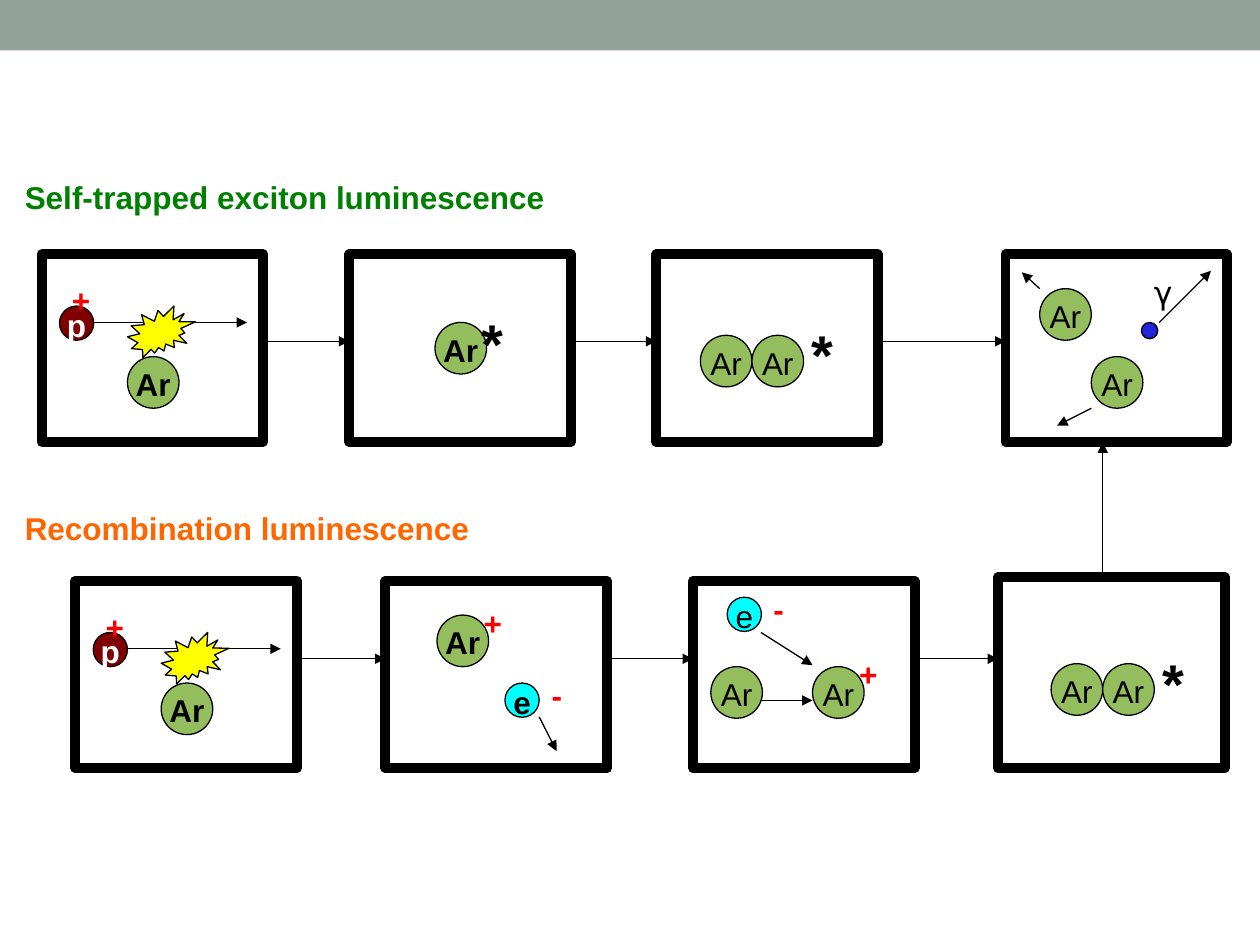
from itertools import pairwise
from lxml.etree import SubElement
from pptx import Presentation
from pptx.dml.color import RGBColor as Color
from pptx.enum.shapes import MSO_CONNECTOR as Connector, MSO_SHAPE as Preset
from pptx.enum.text import MSO_ANCHOR as Anchor, MSO_AUTO_SIZE as AutoSize, PP_ALIGN as Align
from pptx.oxml.ns import qn
from pptx.util import Cm, Pt

THEME = {
    "band": "93A299", "white": "FFFFFF", "black": "000000", "atom": "94BD5E",
    "proton": "800000", "electron": "00FFFF", "photon": "2323DC", "burst": "FFFF00",
    "sign": "FF0000", "exciton": "008000", "recombination": "FF6600",
    "font": "Arial", "greek": "DejaVu Sans", "body": 18, "star": 32,
    "thin": 0.75, "frame": 5.67,
}

PARTICLES = {
    "atom": ("Ar", 1.04, 1.04, Preset.OVAL, "black"),
    "proton": ("p", 0.69, 0.69, Preset.OVAL, "white"),
    "electron": ("e", 0.69, 0.69, Preset.OVAL, "black"),
    "photon": ("", 0.33, 0.33, Preset.OVAL, "black"),
    "burst": ("", 1.37, 1.04, Preset.IRREGULAR_SEAL_2 if hasattr(Preset, "IRREGULAR_SEAL_2")
              else Preset.EXPLOSION2, "black"),
}

LABELS = {
    "+": ("sign", "body", "font", True, 0.18, 0.9),
    "-": ("sign", "body", "font", True, 0.18, 0.9),
    "*": ("black", "star", "font", True, 0.2, 1.35),
    "γ": ("black", "body", "greek", False, 0.13, 0.13),
}


def dimer(x, y):
    return [("atom", x, y), ("atom", x + 1.04, y), ("*", x + 1.99, y - 0.51)]


COLLISION = [("atom", 1.73, 2.06), ("arrow", 0.69, 1.37, 4.14, 1.37),
             ("proton", 0.36, 1.04), ("burst", 1.73, 1.04), ("+", 0.36, 0.36)]
EXCITED = [("atom", 1.73, 1.37), ("*", 2.41, 0.89)]
EMISSION = [("atom", 1.73, 2.06), ("atom", 0.69, 0.69),
            ("arrow", 0.69, 0.69, 0.33, 0.36), ("arrow", 1.73, 3.1, 1.04, 3.45),
            ("photon", 2.74, 1.37), ("arrow", 3.1, 1.37, 4.14, 0.33), ("γ", 2.74, 0.36)]
IONISED = [("atom", 1.04, 0.69), ("electron", 2.41, 2.06), ("-", 3.1, 1.73),
           ("+", 1.73, 0.28), ("arrow", 3.1, 2.74, 3.45, 3.43)]
RECOMBINING = [("electron", 0.69, 0.33), ("atom", 0.36, 1.73), ("atom", 2.41, 1.73),
               ("arrow", 1.37, 2.41, 2.41, 2.41), ("arrow", 1.37, 1.04, 2.41, 1.7),
               ("+", 3.1, 1.32), ("-", 1.37, 0)]

PANEL = (4.47, 3.78)
LAST_PANEL = (4.57, 3.86)
ROWS = [
    ("Self-trapped exciton luminescence", "exciton", 3.45, 6.88, [
        (0.84, 5.13, PANEL, True, COLLISION),
        (7.04, 5.13, PANEL, True, EXCITED),
        (13.23, 5.13, PANEL, False, dimer(0.89, 1.63)),
        (20.27, 5.13, PANEL, False, EMISSION)]),
    ("Recombination luminescence", "recombination", 10.13, 13.28, [
        (1.52, 11.71, PANEL, True, COLLISION),
        (7.77, 11.71, PANEL, True, IONISED),
        (13.97, 11.71, PANEL, False, RECOMBINING),
        (20.12, 11.63, LAST_PANEL, False, dimer(1.07, 1.75))]),
]
RETURN_ARROW = (22.23, 11.63, 22.23, 8.92)


def color(name):
    return Color.from_string(THEME[name])


def add_box(shapes, preset, x, y, width, height, fill, line=None):
    shape = shapes.add_shape(preset, Cm(x), Cm(y), Cm(width), Cm(height))
    shape.shadow.inherit = False
    shape.fill.solid()
    shape.fill.fore_color.rgb = color(fill)
    if line:
        shape.line.color.rgb = color("black")
        shape.line.width = Pt(THEME[line])
    else:
        shape.line.fill.background()
    return shape


def write(shape, text, ink, size="body", font="font", bold=False, top=0.18):
    frame = shape.text_frame
    frame.margin_top = Cm(top)
    paragraph = frame.paragraphs[0]
    paragraph.text = text
    paragraph.font.name = THEME[font]
    paragraph.font.size = Pt(THEME[size])
    paragraph.font.bold = bold
    paragraph.font.color.rgb = color(ink)
    return frame


def add_particle(shapes, kind, x, y, bold):
    text, width, height, preset, ink = PARTICLES[kind]
    shape = add_box(shapes, preset, x, y, width, height, kind, "thin")
    if text:
        frame = write(shape, text, ink, bold=bold)
        frame.word_wrap = False
        frame.vertical_anchor = Anchor.MIDDLE
        frame.paragraphs[0].alignment = Align.CENTER


def add_label(shapes, text, x, y):
    ink, size, font, bold, top, height = LABELS[text]
    box = shapes.add_textbox(Cm(x), Cm(y), Cm(1.73), Cm(height))
    write(box, text, ink, size, font, bold, top).word_wrap = True


def add_arrow(shapes, *ends):
    arrow = shapes.add_connector(Connector.STRAIGHT, *map(Cm, ends))
    arrow.line.color.rgb = color("black")
    arrow.line.width = Pt(THEME["thin"])
    SubElement(arrow.line._get_or_add_ln(), qn("a:tailEnd"), type="triangle")
    SubElement(arrow._element.spPr, qn("a:effectLst"))


def add_panel(slide, left, top, size, bold, content):
    shapes = slide.shapes.add_group_shape().shapes
    add_box(shapes, Preset.RECTANGLE, left, top, *size, "white", "frame")
    for kind, x, y, *end in content:
        x, y = left + x, top + y
        if kind == "arrow":
            add_arrow(shapes, x, y, left + end[0], top + end[1])
        elif kind in LABELS:
            add_label(shapes, kind, x, y)
        else:
            add_particle(shapes, kind, x, y, bold)


def add_row(slide, title, ink, title_top, arrow_y, panels):
    for panel in panels:
        add_panel(slide, *panel)
    for before, after in pairwise(panels):
        add_arrow(slide.shapes, before[0] + before[2][0], arrow_y, after[0], arrow_y)
    box = slide.shapes.add_textbox(Cm(0.25), Cm(title_top), Cm(16.33), Cm(1.02))
    frame = write(box, title, ink, bold=True, top=0.13)
    frame.word_wrap = True
    frame.auto_size = AutoSize.SHAPE_TO_FIT_TEXT


def main():
    presentation = Presentation()
    presentation.slide_width, presentation.slide_height = Cm(25.4), Cm(19.05)
    slide = presentation.slides.add_slide(presentation.slide_layouts[6])
    add_box(slide.shapes, Preset.RECTANGLE, 0, 0, 25.4, 1.02, "band")
    for row in ROWS:
        add_row(slide, *row)
    add_arrow(slide.shapes, *RETURN_ARROW)
    presentation.save("out.pptx")


if __name__ == "__main__":
    main()
